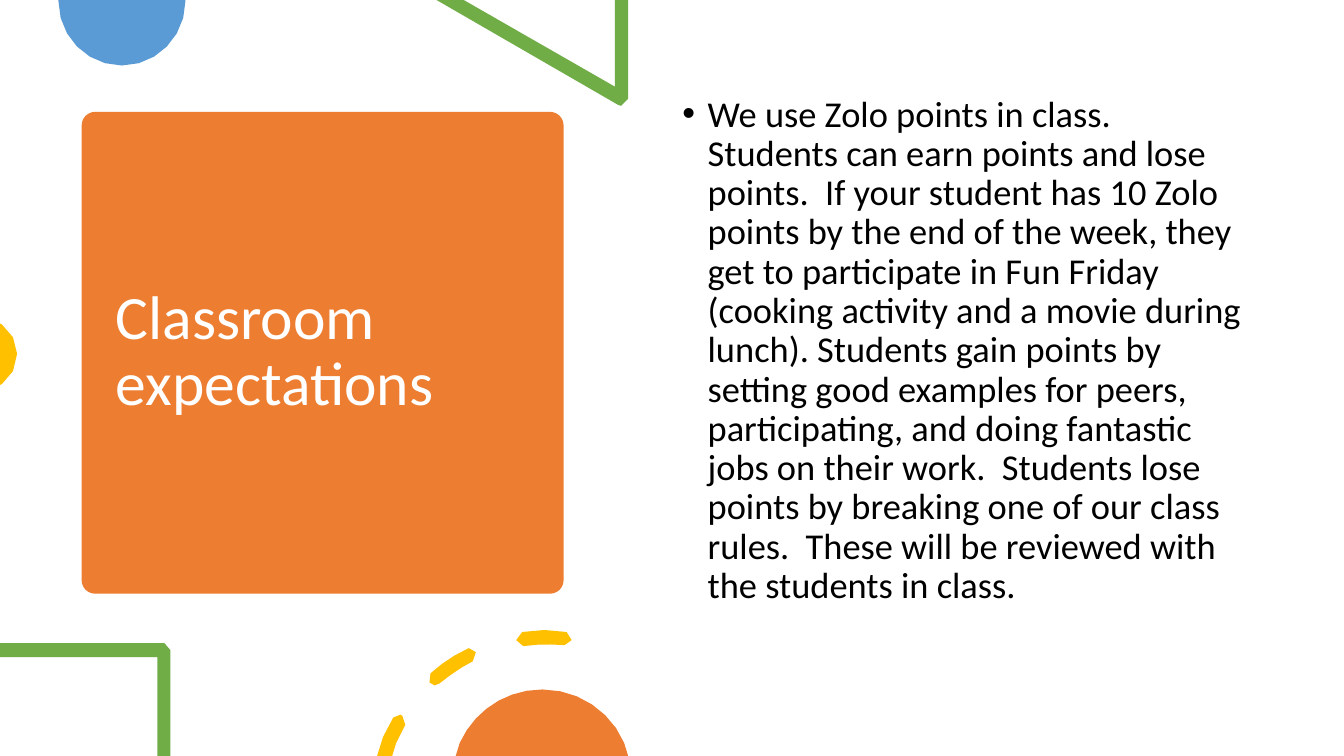
from dataclasses import dataclass
from math import dist
from typing import NamedTuple

from lxml.etree import SubElement
from pptx import Presentation
from pptx.dml.color import RGBColor
from pptx.enum.shapes import MSO_SHAPE
from pptx.enum.text import MSO_ANCHOR
from pptx.oxml.ns import qn
from pptx.shapes.autoshape import Shape
from pptx.slide import Slide
from pptx.text.text import _Paragraph as Paragraph
from pptx.util import Pt

EMU_PER_PX = 9144
CURVE_STEP_PX = 15


@dataclass(frozen=True)
class Theme:
    font: str = "Calibri"
    title_size: int = 44
    body_size: int = 26
    white: str = "FFFFFF"
    black: str = "000000"
    orange: str = "ED7D31"
    blue: str = "5B9BD5"
    green: str = "70AD47"
    yellow: str = "FFC000"


class Box(NamedTuple):
    left: int
    top: int
    width: int
    height: int


Segment = tuple[int, ...]
Contour = list[Segment]


class Decoration(NamedTuple):
    color: str
    contours: list[Contour]


@dataclass(frozen=True)
class TextBlock:
    box: Box
    text: str
    size: int
    color: str
    anchor: MSO_ANCHOR
    space_before: int = 0
    bullet_indent: int = 0


THEME = Theme()
CARD = Box(81, 111, 478, 478)

BLUE_CIRCLE = Decoration(THEME.blue, [
    [(184, 0), (58, 0), (58, 1), (58, 36, 86, 65, 121, 65), (156, 65, 184, 36, 184, 1)],
])
GREEN_TRIANGLE = Decoration(THEME.green, [
    [(623, 0), (610, 0), (610, 86), (460, 0), (433, 0), (613, 104),
     (614, 105, 615, 105, 616, 105), (620, 105, 623, 102, 623, 98)],
])
YELLOW_CIRCLE = Decoration(THEME.yellow, [
    [(0, 321), (0, 382), (2, 381), (11, 374, 17, 364, 17, 351), (17, 339, 11, 329, 2, 322)],
])
GREEN_SQUARE = Decoration(THEME.green, [
    [(163, 638), (0, 638), (0, 652), (156, 652), (156, 750), (169, 750), (169, 645),
     (169, 641, 166, 638, 163, 638)],
])
YELLOW_DASHES = Decoration(THEME.yellow, [
    [(397, 709), (394, 708, 392, 710, 390, 712), (386, 718, 383, 725, 380, 731),
     (374, 750), (389, 750), (393, 737), (396, 731, 399, 725, 402, 719),
     (404, 716, 403, 711, 399, 710)],
    [(465, 643), (463, 644), (450, 650, 438, 658, 427, 668), (424, 670, 424, 675, 426, 677),
     (427, 679, 429, 680, 431, 680), (433, 680, 435, 679, 436, 678),
     (446, 670, 457, 662, 469, 656), (473, 654, 474, 650, 472, 647),
     (471, 644, 468, 643, 465, 643)],
    [(540, 625), (532, 625, 525, 626, 518, 627), (514, 627, 511, 631, 512, 635),
     (512, 638, 515, 641, 519, 641), (533, 639, 546, 639, 560, 640),
     (563, 641, 567, 638, 567, 635), (568, 631, 565, 627, 562, 627),
     (554, 626, 547, 625, 540, 625)],
])
ORANGE_CIRCLE = Decoration(THEME.orange, [
    [(538, 684), (501, 684, 470, 706, 456, 737), (452, 750), (623, 750), (619, 737),
     (606, 706, 574, 684, 538, 684)],
])

TITLE = TextBlock(
    Box(105, 122, 431, 456), "Classroom expectations",
    THEME.title_size, THEME.white, MSO_ANCHOR.MIDDLE,
)
EXPECTATIONS = TextBlock(
    Box(667, 90, 575, 535),
    "We use Zolo points in class.  Students can earn points and lose points.  "
    "If your student has 10 Zolo points by the end of the week, they get to participate "
    "in Fun Friday (cooking activity and a movie during lunch). Students gain points by "
    "setting good examples for peers, participating, and doing fantastic jobs on their "
    "work.  Students lose points by breaking one of our class rules.  These will be "
    "reviewed with the students in class.",
    THEME.body_size, THEME.black, MSO_ANCHOR.TOP, space_before=10, bullet_indent=25,
)


def emu(px: float) -> int:
    return round(px * EMU_PER_PX)


def paint(shape: Shape, color: str) -> None:
    shape.shadow.inherit = False
    shape.fill.solid()
    shape.fill.fore_color.rgb = RGBColor.from_string(color)
    shape.line.fill.background()


def outline_points(contour: Contour) -> list[tuple[int, int]]:
    points: list[tuple[float, float]] = []
    for segment in contour:
        if len(segment) == 2:
            points.append((segment[0], segment[1]))
            continue
        controls = [points[-1], segment[0:2], segment[2:4], segment[4:6]]
        steps = max(1, round(dist(controls[0], controls[3]) / CURVE_STEP_PX))
        for step in range(1, steps + 1):
            t = step / steps
            weights = ((1 - t) ** 3, 3 * t * (1 - t) ** 2, 3 * t * t * (1 - t), t ** 3)
            x, y = (
                sum(weight * control[axis] for weight, control in zip(weights, controls))
                for axis in (0, 1)
            )
            points.append((x, y))
    if points[-1] == points[0]:
        points.pop()
    return [(emu(x), emu(y)) for x, y in points]


def add_decoration(slide: Slide, decoration: Decoration) -> None:
    outlines = [outline_points(contour) for contour in decoration.contours]
    builder = slide.shapes.build_freeform(*outlines[0][0], scale=1.0)
    for index, points in enumerate(outlines):
        if index:
            builder.move_to(*points[0])
        builder.add_line_segments(points[1:], close=True)
    paint(builder.convert_to_shape(), decoration.color)


def add_card(slide: Slide, box: Box) -> None:
    card = slide.shapes.add_shape(MSO_SHAPE.ROUNDED_RECTANGLE, *map(emu, box))
    card.adjustments[0] = 0.028
    paint(card, THEME.orange)


def add_bullet(paragraph: Paragraph, indent: int) -> None:
    properties = paragraph._p.get_or_add_pPr()
    properties.set("marL", str(emu(indent)))
    properties.set("indent", str(-emu(indent)))
    SubElement(properties, qn("a:buFont")).set("typeface", "Arial")
    SubElement(properties, qn("a:buChar")).set("char", "•")


def add_text(slide: Slide, block: TextBlock) -> None:
    frame = slide.shapes.add_textbox(*map(emu, block.box)).text_frame
    frame.word_wrap = True
    frame.vertical_anchor = block.anchor
    paragraph = frame.paragraphs[0]
    paragraph.text = block.text
    paragraph.line_spacing = 0.9
    paragraph.space_before = Pt(block.space_before)
    if block.bullet_indent:
        add_bullet(paragraph, block.bullet_indent)
    paragraph.font.name = THEME.font
    paragraph.font.size = Pt(block.size)
    paragraph.font.color.rgb = RGBColor.from_string(block.color)


def main() -> None:
    presentation = Presentation()
    presentation.slide_width = emu(1333)
    presentation.slide_height = emu(750)
    slide = presentation.slides.add_slide(presentation.slide_layouts[6])
    add_card(slide, CARD)
    add_text(slide, TITLE)
    for decoration in (BLUE_CIRCLE, GREEN_TRIANGLE, YELLOW_CIRCLE):
        add_decoration(slide, decoration)
    add_text(slide, EXPECTATIONS)
    for decoration in (GREEN_SQUARE, YELLOW_DASHES, ORANGE_CIRCLE):
        add_decoration(slide, decoration)
    presentation.save("out.pptx")


if __name__ == "__main__":
    main()
